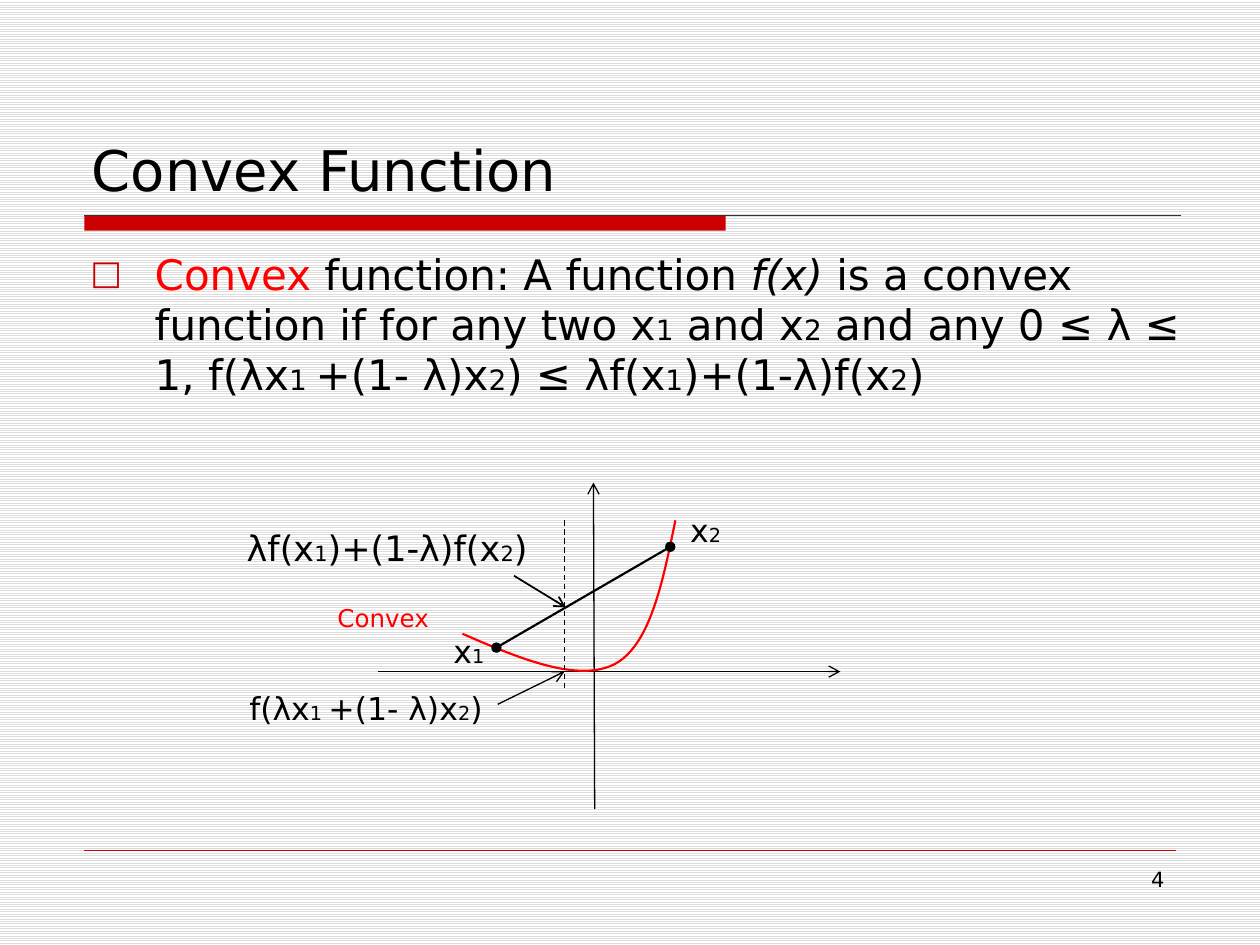
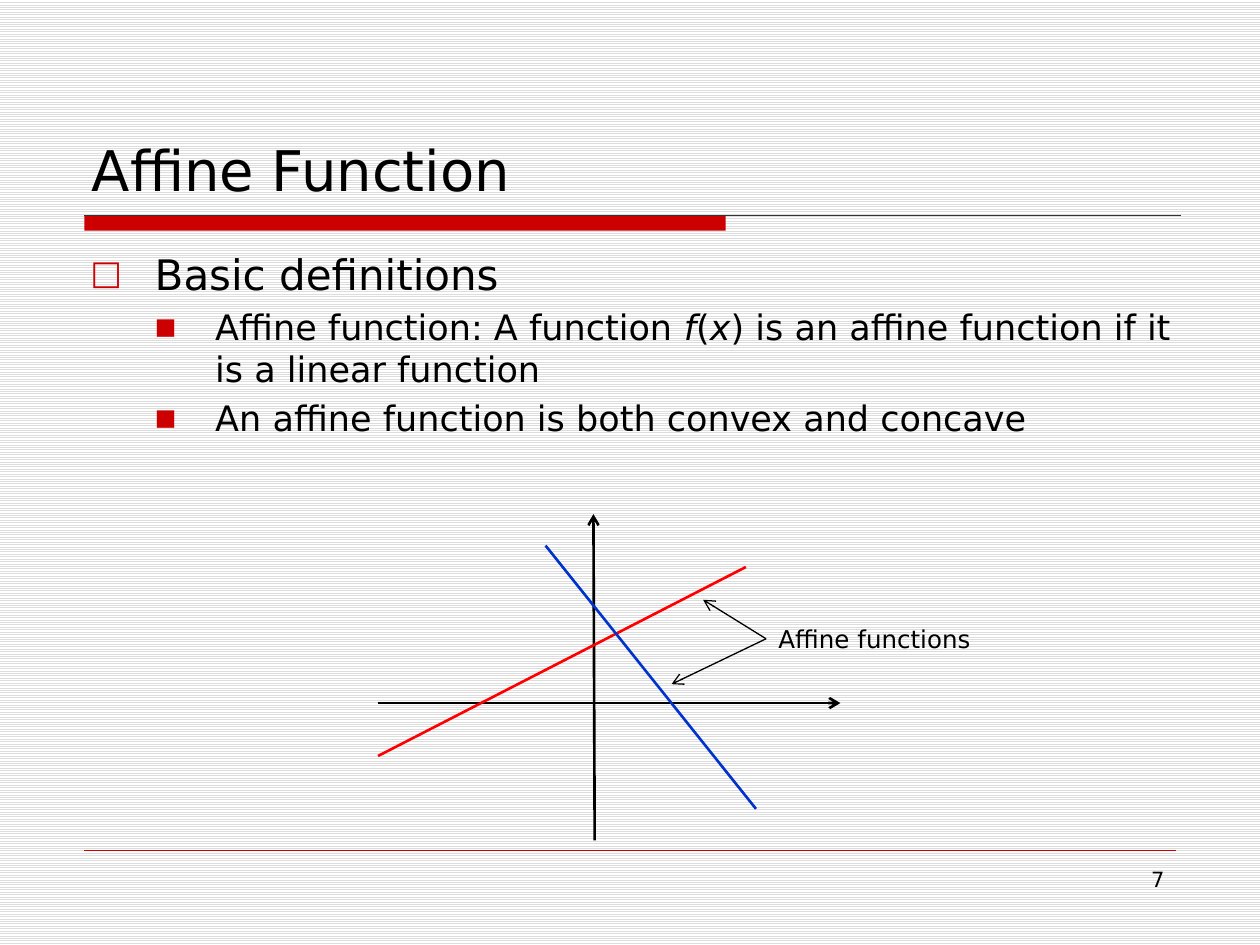
from lxml.etree import SubElement
from pptx import Presentation
from pptx.dml.color import RGBColor
from pptx.enum.dml import MSO_LINE, MSO_PATTERN
from pptx.enum.shapes import MSO_CONNECTOR, MSO_SHAPE
from pptx.enum.text import MSO_ANCHOR as ANCHOR, PP_ALIGN as ALIGN
from pptx.oxml.ns import qn
from pptx.util import Inches, Pt

FONT = "DejaVu Sans"
COLORS = {
    "paper": "FFFFFF", "stripe": "DDDDDD", "text": "000000", "rule": "333333",
    "accent": "CC0000", "red": "FF0000", "blue": "0033CC",
}
WIDTH, HEIGHT = 10, 7.5
LEFT, RIGHT = 0.67, 9.33
BAR_TOP = 1.71

# level: (size, left indent, hanging indent, bullet, bullet size in percent)
LEVELS = [(24, 0.51, 0.51, "□", 80), (20, 0.99, 0.48, "■", 65)]
SUB_SIZES = {24: 16, 20: 12, 18: 11}

# Rich text is a list of (text, style); style is "", "sub", "it" or "red".
CHORD_VALUE = [("λf(x", ""), ("1", "sub"), (")+(1-λ)f(x", ""), ("2", "sub"), (")", "")]
CURVE_VALUE = [("f(λx", ""), ("1 ", "sub"), ("+(1- λ)x", ""), ("2", "sub"), (")", "")]

# Lines are (from, to, colour, width, options).
ARROW = {"tail": "arrow"}
CALLOUT_START = (6.08, 5.07)

SLIDES = [
    {
        "title": "Convex Function", "number": 4,
        "body": [
            (0, [("Convex", "red"), (" function: A function ", ""), ("f(x)", "it"),
                 (" is a convex function if for any two x", ""), ("1", "sub"),
                 (" and x", ""), ("2", "sub"), (" and any 0 ≤ λ ≤ 1, ", "")]
             + CURVE_VALUE + [(" ≤ ", "")] + CHORD_VALUE),
        ],
        "axes": (5.33, 0.75),
        "curves": [
            [(3.67, 5.03), (4.13, 5.23), (4.59, 5.42), (4.88, 5.27),
             (5.16, 5.12), (5.26, 4.62), (5.36, 4.13)],
        ],
        "lines": [
            ((3.95, 5.59), (4.48, 5.33), "text", 0.75, ARROW),
            ((4.08, 4.57), (4.49, 4.82), "text", 1, ARROW),
            ((3.94, 5.14), (5.32, 4.34), "text", 1.25, {"head": "oval", "tail": "oval"}),
            ((4.48, 4.13), (4.48, 5.49), "text", 0.75, {"dash": True}),
        ],
        "labels": [  # (left, top, width, size, rich text)
            (2.58, 4.74, 1.02, 14, [("Convex", "red")]),
            (1.86, 4.13, 2.62, 20, CHORD_VALUE),
            (3.5, 4.97, 0.6, 18, [("x", ""), ("1", "sub")]),
            (5.38, 4.01, 0.6, 18, [("x", ""), ("2", "sub")]),
            (1.88, 5.42, 2.25, 18, CURVE_VALUE),
        ],
    },
    {
        "title": "Affine Function", "number": 7,
        "body": [
            (0, [("Basic definitions", "")]),
            (1, [("Affine function: A function ", ""), ("f", "it"), ("(", ""), ("x", "it"),
                 (") is an affine function if it is a linear function", "")]),
            (1, [("An affine function is both convex and concave", "")]),
        ],
        "axes": (5.58, 1.5),
        "curves": [],
        "lines": [
            ((3, 6), (5.92, 4.5), "red", 1.5, {}),
            ((4.33, 4.33), (6, 6.42), "blue", 1.5, {}),
            (CALLOUT_START, (5.58, 4.76), "text", 0.75, ARROW),
            (CALLOUT_START, (5.33, 5.43), "text", 0.75, ARROW),
        ],
        "labels": [(6.08, 4.9, 2, 14, [("Affine functions", "")])],
    },
]


def rgb(name):
    return RGBColor.from_string(COLORS[name])


def add_runs(p, rich, size):
    for text, style in rich:
        r = p.add_run()
        r.text = text
        r.font.name = FONT
        r.font.size = Pt(SUB_SIZES[size] if style == "sub" else size)
        r.font.italic = style == "it"
        r.font.color.rgb = rgb("red" if style == "red" else "text")


def add_text(s, left, top, width, height, anchor=ANCHOR.TOP):
    """Add an empty wrapping text box and return its text frame."""
    box = s.shapes.add_textbox(*map(Inches, (left, top, width, height)))
    tf = box.text_frame
    tf.word_wrap = True
    tf.vertical_anchor = anchor
    return tf


def add_line(s, start, end, color, width, options=None):
    options = options or {}
    c = s.shapes.add_connector(MSO_CONNECTOR.STRAIGHT, *map(Inches, (*start, *end)))
    c.line.color.rgb = rgb(color)
    c.line.width = Pt(width)
    if options.get("dash"):
        c.line.dash_style = MSO_LINE.DASH
    sp_pr = c.element.spPr
    for side in ("head", "tail"):
        if side in options:
            SubElement(sp_pr.find(qn("a:ln")), qn(f"a:{side}End"), type=options[side])
    SubElement(sp_pr, qn("a:effectLst"))


def add_curve(s, points, color="red", width=1.25, steps=24):
    """Trace joined cubic Bézier segments; neighbours share an end point."""
    points = [tuple(map(Inches, point)) for point in points]
    trace = []
    for i in range(0, len(points) - 1, 3):
        for k in range(1, steps + 1):
            t = k / steps
            weights = ((1 - t) ** 3, 3 * t * (1 - t) ** 2, 3 * t * t * (1 - t), t ** 3)
            trace.append([round(sum(w * v for w, v in zip(weights, axis)))
                          for axis in zip(*points[i:i + 4])])
    builder = s.shapes.build_freeform(*points[0])
    builder.add_line_segments(trace, close=False)
    sp = builder.convert_to_shape()
    sp.shadow.inherit = False
    sp.fill.background()
    sp.line.color.rgb = rgb(color)
    sp.line.width = Pt(width)


def add_axes(s, y, width):
    add_line(s, (3, y), (6.67, y), "text", width, ARROW)
    add_line(s, (4.72, y + 1.09), (4.71, y - 1.5), "text", width, ARROW)


def add_body(s, items):
    tf = add_text(s, 0.62, 1.92, 8.96, 2.67)
    for i, (level, rich) in enumerate(items):
        size, indent, hanging, bullet, percent = LEVELS[level]
        p = tf.add_paragraph() if i else tf.paragraphs[0]
        p.space_before = Pt(size * 0.2)
        add_runs(p, rich, size)
        pr = p._p.get_or_add_pPr()
        pr.set("marL", str(Inches(indent)))
        pr.set("indent", str(-Inches(hanging)))
        SubElement(SubElement(pr, qn("a:buClr")), qn("a:srgbClr"), val=COLORS["accent"])
        SubElement(pr, qn("a:buSzPct"), val=str(percent * 1000))
        SubElement(pr, qn("a:buFont"), typeface=FONT)
        SubElement(pr, qn("a:buChar"), char=bullet)


def add_frame(s, title, number):
    """Add what every slide shares: background, title, bands and page number."""
    fill = s.background.fill
    fill.patterned()
    fill.pattern = MSO_PATTERN.LIGHT_HORIZONTAL
    fill.fore_color.rgb = rgb("stripe")
    fill.back_color.rgb = rgb("paper")

    bar = s.shapes.add_shape(MSO_SHAPE.RECTANGLE,
                             *map(Inches, (LEFT, BAR_TOP, 5.09, 0.12)))
    bar.shadow.inherit = False
    bar.fill.solid()
    bar.fill.fore_color.rgb = rgb("accent")
    bar.line.fill.background()
    add_line(s, (LEFT, BAR_TOP), (9.37, BAR_TOP), "rule", 0.75)
    add_line(s, (LEFT, 6.75), (RIGHT, 6.75), "accent", 0.25)

    tf = add_text(s, 0.63, 0.33, 8.75, 1.33, ANCHOR.BOTTOM)
    add_runs(tf.paragraphs[0], [(title, "")], 32)
    p = add_text(s, 7.17, 6.83, 2.17, 0.52).paragraphs[0]
    p.alignment = ALIGN.RIGHT
    add_runs(p, [(str(number), "")], 12)


def main():
    prs = Presentation()
    prs.slide_width, prs.slide_height = Inches(WIDTH), Inches(HEIGHT)
    for content in SLIDES:
        s = prs.slides.add_slide(prs.slide_layouts[6])
        add_frame(s, content["title"], content["number"])
        add_body(s, content["body"])
        add_axes(s, *content["axes"])
        for points in content["curves"]:
            add_curve(s, points)
        for line in content["lines"]:
            add_line(s, *line)
        for left, top, width, size, rich in content["labels"]:
            tf = add_text(s, left, top, width, 0.1 + size / 60)
            add_runs(tf.paragraphs[0], rich, size)
    prs.save("out.pptx")


if __name__ == "__main__":
    main()
